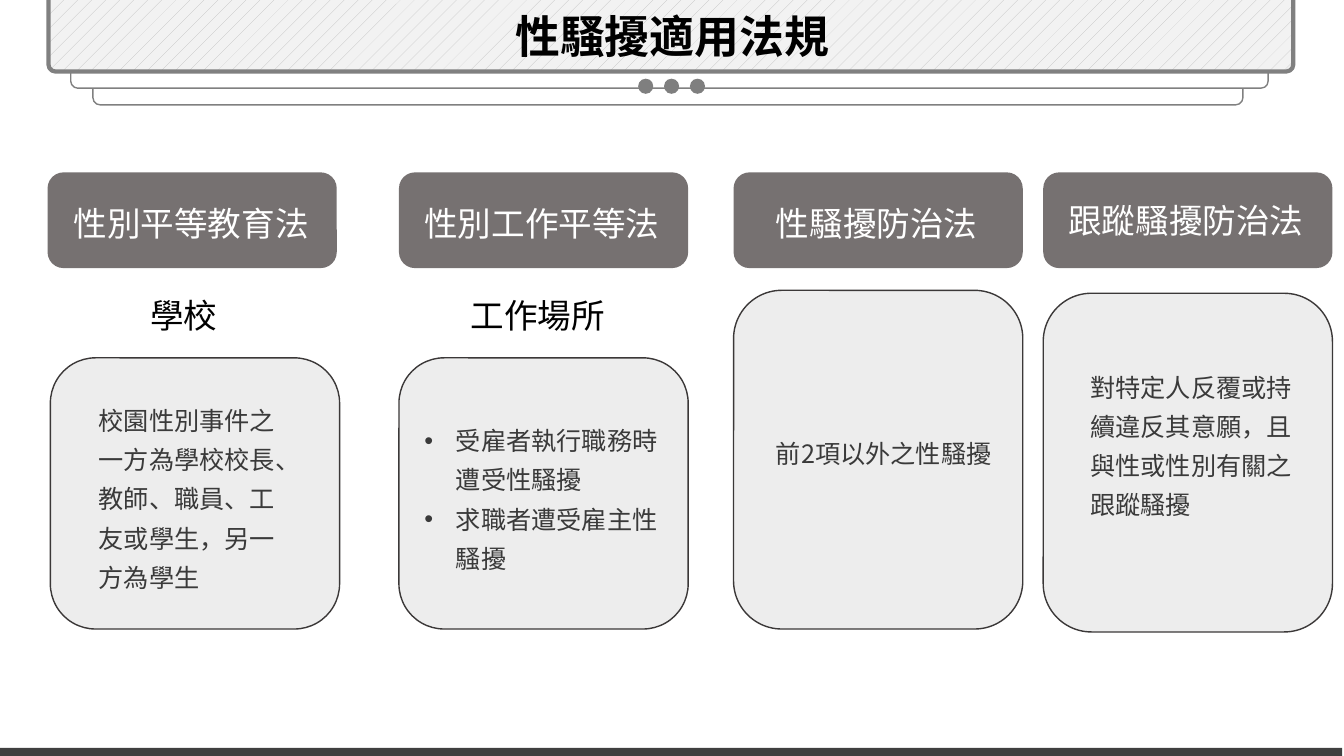
from dataclasses import dataclass
from typing import Optional

from lxml.etree import SubElement
from pptx import Presentation
from pptx.dml.color import RGBColor
from pptx.enum.dml import MSO_PATTERN
from pptx.enum.shapes import MSO_SHAPE
from pptx.enum.text import MSO_AUTO_SIZE, PP_ALIGN as Align
from pptx.oxml.ns import qn
from pptx.util import Pt

FONT = "Noto Sans CJK JP"
COLORS = {
    "white": "FFFFFF", "black": "000000", "frame": "808080", "dot": "7F7F7F",
    "stripe": "BFBFBF", "banner": "F2F2F2", "header": "767171",
    "panel": "EDEDED", "outline": "3B3838", "body": "3A3A3A", "footer": "404040",
}
CARD_WIDTH = 206.6
HEADER_TOP, HEADER_HEIGHT = 123.1, 68.4
HEADING_HEIGHT = 36
PLACE_TOP = 207.4
BULLET_INDENT = 22.5


@dataclass
class Box:
    left: float
    top: float
    width: float
    height: float


@dataclass
class Law:
    left: float
    name: str
    name_box: Box
    panel: Box
    body: list[str]
    body_box: Box
    bulleted: bool = False
    place: str = ""
    place_box: Optional[Box] = None


LAWS = [
    Law(34, "性別平等教育法", Box(45.4, 141.1, 183.6, HEADING_HEIGHT),
        Box(36, 255.6, CARD_WIDTH, 193.7),
        ["校園性別事件之一方為學校校長、教師、職員、工友或學生，另一方為學生"],
        Box(63.4, 279.4, 151.2, 146.2),
        place="學校", place_box=Box(100.1, PLACE_TOP, 72, HEADING_HEIGHT)),
    Law(285, "性別工作平等法", Box(296, 141.1, 183.6, HEADING_HEIGHT),
        Box(285, 255.6, CARD_WIDTH, 193.7),
        ["受雇者執行職務時遭受性騷擾", "求職者遭受雇主性騷擾"],
        Box(296, 293.8, 183.6, 118.1), bulleted=True,
        place="工作場所", place_box=Box(329, PLACE_TOP, 118.1, HEADING_HEIGHT)),
    Law(524, "性騷擾防治法", Box(547.2, 141.1, 159.8, HEADING_HEIGHT),
        Box(524, 207.4, CARD_WIDTH, 241.9),
        ["前2項以外之性騷擾"], Box(547.2, 303.1, 170.6, 33.1)),
    Law(745.2, "跟蹤騷擾防治法", Box(756, 139, 183.6, HEADING_HEIGHT),
        Box(745.2, 209.5, CARD_WIDTH, 241.9),
        ["對特定人反覆或持續違反其意願，且與性或性別有關之跟蹤騷擾"],
        Box(771.8, 255.6, 170.6, 118.1)),
]


def color(name: str) -> RGBColor:
    return RGBColor.from_string(COLORS[name])


def place_args(box: Box) -> tuple:
    return Pt(box.left), Pt(box.top), Pt(box.width), Pt(box.height)


def add_shape(slide, kind, box: Box, fill: str = "", line: str = "", line_width: float = 1):
    shape = slide.shapes.add_shape(kind, *place_args(box))
    shape.shadow.inherit = False
    if fill:
        shape.fill.solid()
        shape.fill.fore_color.rgb = color(fill)
    else:
        shape.fill.background()
    if line:
        shape.line.color.rgb = color(line)
        shape.line.width = Pt(line_width)
    else:
        shape.line.fill.background()
    return shape


def add_bullet(paragraph) -> None:
    properties = paragraph._p.get_or_add_pPr()
    properties.set("marL", str(Pt(BULLET_INDENT)))
    properties.set("indent", str(-Pt(BULLET_INDENT)))
    SubElement(properties, qn("a:buFont")).set("typeface", "Arial")
    SubElement(properties, qn("a:buChar")).set("char", "•")


def add_text(slide, box: Box, lines: list[str], size: float, text_color: str,
             bold: bool = False, align: Optional[Align] = None,
             spacing: Optional[float] = None, bulleted: bool = False) -> None:
    text_frame = slide.shapes.add_textbox(*place_args(box)).text_frame
    text_frame.word_wrap = True
    text_frame.auto_size = MSO_AUTO_SIZE.SHAPE_TO_FIT_TEXT
    text_frame.text = "\n".join(lines)
    for paragraph in text_frame.paragraphs:
        if align is not None:
            paragraph.alignment = align
        if spacing is not None:
            paragraph.line_spacing = spacing
        if bulleted:
            add_bullet(paragraph)
        for run in paragraph.runs:
            run.font.size = Pt(size)
            run.font.bold = bold
            run.font.color.rgb = color(text_color)
            run.font.name = FONT
            SubElement(run._r.get_or_add_rPr(), qn("a:ea")).set("typeface", FONT)


def add_banner(slide) -> None:
    """Three stacked sheets hanging from the top edge, with dots and the title."""
    for step, fill in ((2, ""), (1, "white"), (0, "banner")):
        box = Box(34.6 + 15.9 * step, -229.7 + 11.9 * step, 889.2 - 33.9 * step, 280.8)
        sheet = add_shape(slide, MSO_SHAPE.ROUNDED_RECTANGLE, box, fill, "frame",
                          1 if step else 3)
        sheet.adjustments[0] = 0.018
    sheet.fill.patterned()
    sheet.fill.pattern = MSO_PATTERN.PERCENT_5
    sheet.fill.fore_color.rgb = color("stripe")
    sheet.fill.back_color.rgb = color("banner")
    for index in range(3):
        add_shape(slide, MSO_SHAPE.OVAL, Box(455.8 + 18.5 * index, 56.2, 10.8, 10.8), "dot")
    add_text(slide, Box(308.9, 2.9, 342.7, 46.1), ["性騷擾適用法規"], 32, "black",
             bold=True, align=Align.CENTER)


def add_law(slide, law: Law) -> None:
    add_shape(slide, MSO_SHAPE.ROUNDED_RECTANGLE, law.panel, "panel", "outline")
    add_shape(slide, MSO_SHAPE.ROUNDED_RECTANGLE,
              Box(law.left, HEADER_TOP, CARD_WIDTH, HEADER_HEIGHT), "header")
    add_text(slide, law.name_box, [law.name], 24, "white")
    if law.place_box:
        add_text(slide, law.place_box, [law.place], 24, "black")
    add_text(slide, law.body_box, law.body, 18, "body", spacing=1.3, bulleted=law.bulleted)


def main() -> None:
    presentation = Presentation()
    presentation.slide_width, presentation.slide_height = Pt(960), Pt(540)
    slide = presentation.slides.add_slide(presentation.slide_layouts[6])
    add_banner(slide)
    add_shape(slide, MSO_SHAPE.RECTANGLE, Box(-1.4, 534.2, 960, 5.8), "footer")
    for law in LAWS:
        add_law(slide, law)
    presentation.save("out.pptx")


if __name__ == "__main__":
    main()
